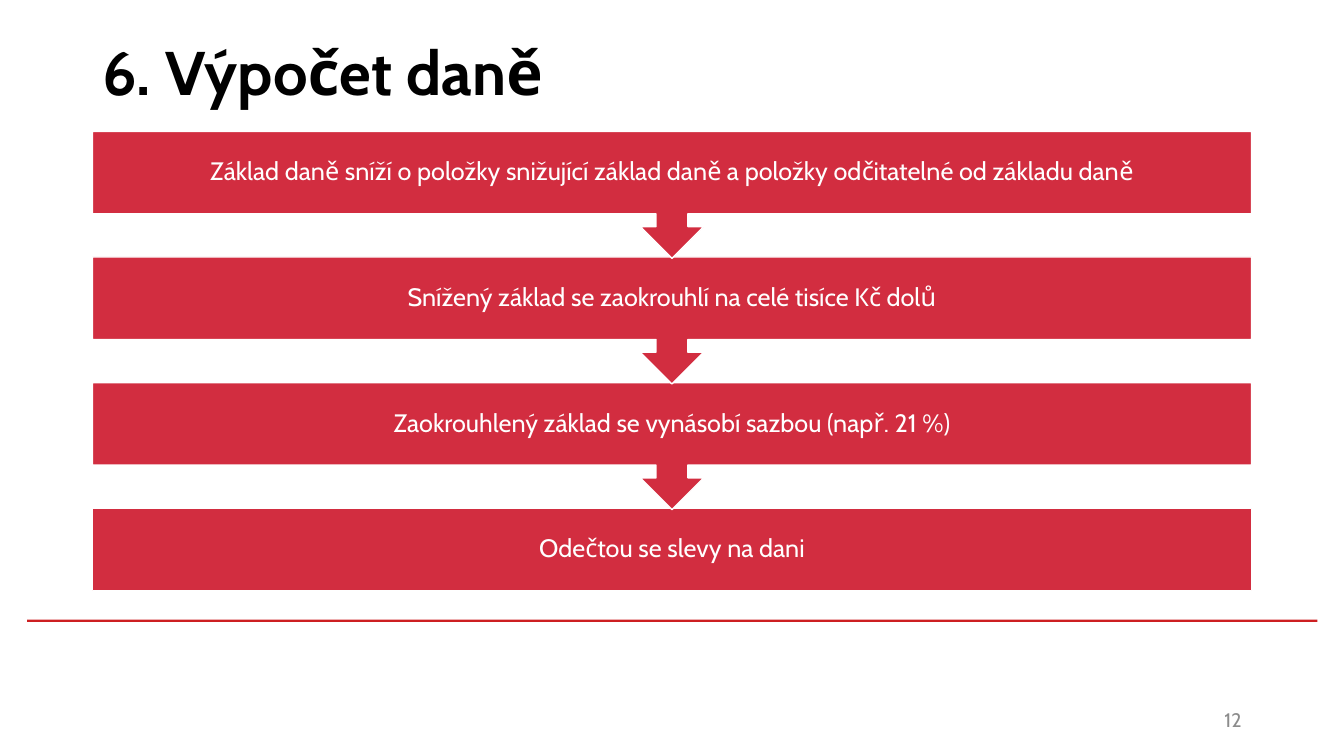
import pptx
import pptx.util
import pptx.dml.color
import pptx.enum.shapes
import pptx.enum.text

Pt = pptx.util.Pt
SHAPES = pptx.enum.shapes.MSO_SHAPE
ALIGN = pptx.enum.text.PP_ALIGN

STEPS = [
    "Základ daně sníží o položky snižující základ daně a položky odčitatelné od základu daně",
    "Snížený základ se zaokrouhlí na celé tisíce Kč dolů",
    "Zaokrouhlený základ se vynásobí sazbou (např. 21 %)",
    "Odečtou se slevy na dani",
]
TITLE_FONT = {"name": "Cabin", "size": Pt(44), "bold": True}
STEP_FONT = {"name": "Cabin", "size": Pt(18)}
NUMBER_FONT = {"name": "Cabin", "size": Pt(14)}


def color(hex_code):
    return pptx.dml.color.RGBColor.from_string(hex_code)


def write(box, text, font, hex_code, align, inset=None):
    """Fill a shape with one vertically centred paragraph."""
    frame = box.text_frame
    frame.word_wrap = True
    frame.vertical_anchor = pptx.enum.text.MSO_ANCHOR.MIDDLE
    if inset is not None:
        for side in ("left", "right", "top", "bottom"):
            setattr(frame, f"margin_{side}", Pt(inset))
    paragraph = frame.paragraphs[0]
    paragraph.alignment = align
    paragraph.line_spacing = 0.9
    run = paragraph.add_run()
    run.text = text
    for key, value in font.items():
        setattr(run.font, key, value)
    run.font.color.rgb = color(hex_code)


def add_label(slide, left, top, width, height, text, font, hex_code, align):
    label = slide.shapes.add_textbox(Pt(left), Pt(top), Pt(width), Pt(height))
    write(label, text, font, hex_code, align)


def add_block(slide, kind, left, top, width, height, fill, line=None):
    block = slide.shapes.add_shape(kind, Pt(left), Pt(top), Pt(width), Pt(height))
    block.shadow.inherit = False
    block.fill.solid()
    block.fill.fore_color.rgb = color(fill)
    if line:
        block.line.color.rgb = color(line)
        block.line.width = Pt(1)
    else:
        block.line.fill.background()
    return block


def add_process(slide, left, top, width, height, steps):
    """Stack the steps; each but the last points down to the next."""
    body = 59
    pitch = (height - body) / (len(steps) - 1)
    last = len(steps) - 1
    # The later steps lie behind the arrows of the earlier ones
    for index in range(last, -1, -1):
        is_last = index == last
        kind = SHAPES.RECTANGLE if is_last else SHAPES.DOWN_ARROW_CALLOUT
        step_height = body if is_last else pitch + 1
        step = add_block(slide, kind, left, top + index * pitch, width,
                         step_height, "D22D40", "FFFFFF")
        write(step, steps[index], STEP_FONT, "FFFFFF", ALIGN.CENTER, inset=10)


def main():
    deck = pptx.Presentation()
    deck.slide_width, deck.slide_height = Pt(960), Pt(540)
    slide = deck.slides.add_slide(deck.slide_layouts[6])

    # Footer rule
    add_block(slide, SHAPES.RECTANGLE, 19.4, 442.6, 921.6, 1.6, "CD1F21")
    # Title and slide number
    add_label(slide, 66, 1.4, 828, 104.4, "6. Výpočet daně", TITLE_FONT, "000000", ALIGN.LEFT)
    add_label(slide, 678, 500.5, 216, 28.8, "12", NUMBER_FONT, "8C8C8C", ALIGN.RIGHT)
    # Tax calculation steps
    add_process(slide, 66, 93.8, 828, 328.2, STEPS)

    deck.save("out.pptx")


if __name__ == "__main__":
    main()
